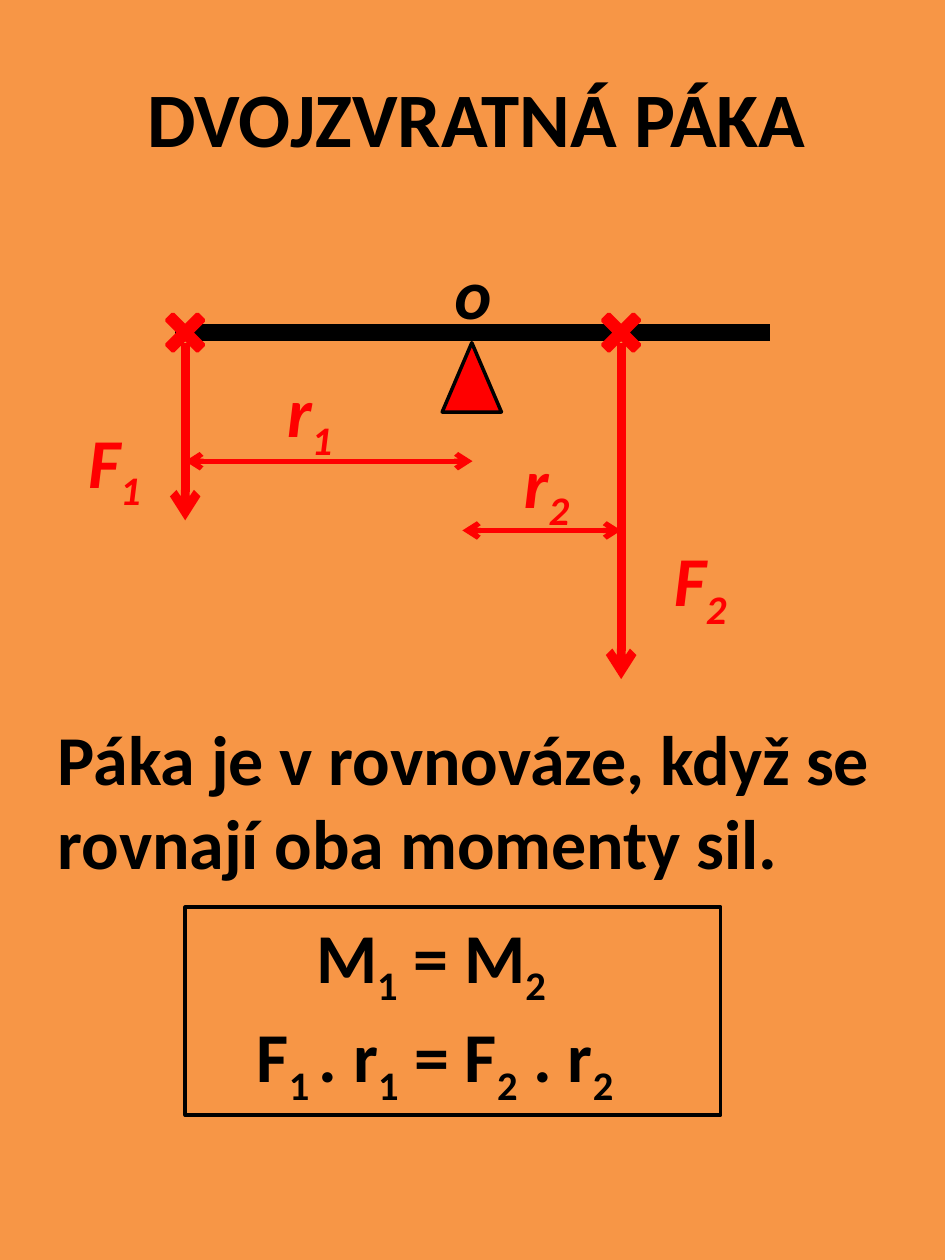
from dataclasses import dataclass

from lxml.etree import SubElement
from pptx import Presentation
from pptx.dml.color import RGBColor
from pptx.enum.shapes import MSO_CONNECTOR as Connector, MSO_SHAPE as Shape
from pptx.enum.text import MSO_AUTO_SIZE as AutoSize
from pptx.oxml.ns import qn
from pptx.util import Inches, Pt

COLORS = {"background": "F79646", "ink": "000000", "force": "FF0000"}
FONT = "Calibri"
BEAM_Y = 2.64
BEAM_BOTTOM = 2.72
FORCE_1_X, FORCE_2_X = 1.47, 4.93
CROSS_SIZE = 0.47


@dataclass
class Label:
    left: float
    top: float
    width: float
    height: float
    spans: list[str]
    color: str = "ink"
    size: int = 40
    italic: bool = False
    wrap: bool = False


@dataclass
class Line:
    start: tuple[float, float]
    end: tuple[float, float]
    width: float
    color: str = "force"
    head: bool = False
    tail: bool = True


@dataclass
class Figure:
    kind: Shape
    left: float
    top: float
    width: float
    height: float
    fill: str | None = "force"
    line: str = "ink"
    adjustment: float | None = None


def rgb(name: str) -> RGBColor:
    return RGBColor.from_string(COLORS[name])


def draw_label(page, label: Label) -> None:
    box = page.shapes.add_textbox(
        Inches(label.left), Inches(label.top), Inches(label.width), Inches(label.height)
    )
    frame = box.text_frame
    frame.word_wrap = label.wrap
    frame.auto_size = AutoSize.SHAPE_TO_FIT_TEXT
    para = frame.paragraphs[0]
    for index, text in enumerate(label.spans):
        span = para.add_run()
        span.text = text
        font = span.font
        font.name, font.size = FONT, Pt(label.size)
        font.bold, font.italic = True, label.italic
        font.color.rgb = rgb(label.color)
        if index % 2:
            font._element.set("baseline", "-25000")


def draw_line(page, line: Line) -> None:
    connector = page.shapes.add_connector(
        Connector.STRAIGHT, *(Inches(value) for value in line.start + line.end)
    )
    connector.line.width = Pt(line.width)
    connector.line.color.rgb = rgb(line.color)
    outline = connector.line._get_or_add_ln()
    for tag, shown in (("a:headEnd", line.head), ("a:tailEnd", line.tail)):
        if shown:
            SubElement(outline, qn(tag), type="arrow")
    SubElement(connector._element.spPr, qn("a:effectLst"))


def draw_figure(page, figure: Figure) -> None:
    shape = page.shapes.add_shape(
        figure.kind,
        Inches(figure.left),
        Inches(figure.top),
        Inches(figure.width),
        Inches(figure.height),
    )
    shape.shadow.inherit = False
    if figure.fill:
        shape.fill.solid()
        shape.fill.fore_color.rgb = rgb(figure.fill)
    else:
        shape.fill.background()
    shape.line.color.rgb = rgb(figure.line)
    shape.line.width = Pt(2)
    if figure.adjustment is not None:
        shape.adjustments[0] = figure.adjustment


def force_cross(x: float) -> Figure:
    return Figure(
        Shape.MATH_MULTIPLY, x - CROSS_SIZE / 2, BEAM_Y - CROSS_SIZE / 2,
        CROSS_SIZE, CROSS_SIZE, line="force", adjustment=0.15,
    )


def symbol(left: float, top: float, width: float, *spans: str) -> Label:
    return Label(left, top, width, 0.77, list(spans), color="force", italic=True)


def force_arrow(x: float, bottom: float) -> Line:
    return Line((x, BEAM_BOTTOM), (x, bottom), 5)


def arm_arrow(left: float, right: float, y: float) -> Line:
    return Line((left, y), (right, y), 3, head=True)


ITEMS = [
    Line((1.39, BEAM_Y), (6.11, BEAM_Y), 10, color="ink", tail=False),
    Figure(Shape.ISOSCELES_TRIANGLE, 3.51, BEAM_BOTTOM, 0.47, 0.55),
    Label(3.51, 1.93, 0.5, 0.77, ["o"], italic=True),
    Label(1.07, 0.51, 5.48, 1.14, ["DVOJZVRATNÁ PÁKA"], size=44),
    force_arrow(FORCE_1_X, 4.13),
    force_arrow(FORCE_2_X, 5.39),
    force_cross(FORCE_1_X),
    force_cross(FORCE_2_X),
    symbol(0.6, 3.27, 0.65, "F", "1"),
    symbol(5.25, 4.21, 0.65, "F", "2"),
    arm_arrow(FORCE_1_X, 3.75, 3.66),
    symbol(2.18, 2.87, 0.59, "r", "1"),
    arm_arrow(3.67, FORCE_2_X, 4.21),
    symbol(4.06, 3.43, 0.59, "r", "2"),
    Label(0.36, 5.63, 6.66, 1.75,
          ["Páka je v rovnováze, když se rovnají oba momenty sil."], wrap=True),
    Label(2.41, 7.2, 2.09, 0.77, ["M", "1", " = M", "2"]),
    Label(1.94, 7.99, 3.15, 0.77, ["F", "1 ", ". r", "1", " = F", "2", " . r", "2"]),
    Figure(Shape.FLOWCHART_PROCESS, FORCE_1_X, 7.2, 4.25, 1.65, fill=None),
]
DRAW = {Label: draw_label, Line: draw_line, Figure: draw_figure}


def main() -> None:
    deck = Presentation()
    deck.slide_width, deck.slide_height = Inches(7.5), Inches(10)
    page = deck.slides.add_slide(deck.slide_layouts[6])
    page.background.fill.solid()
    page.background.fill.fore_color.rgb = rgb("background")
    for item in ITEMS:
        DRAW[type(item)](page, item)
    deck.save("out.pptx")


if __name__ == "__main__":
    main()
